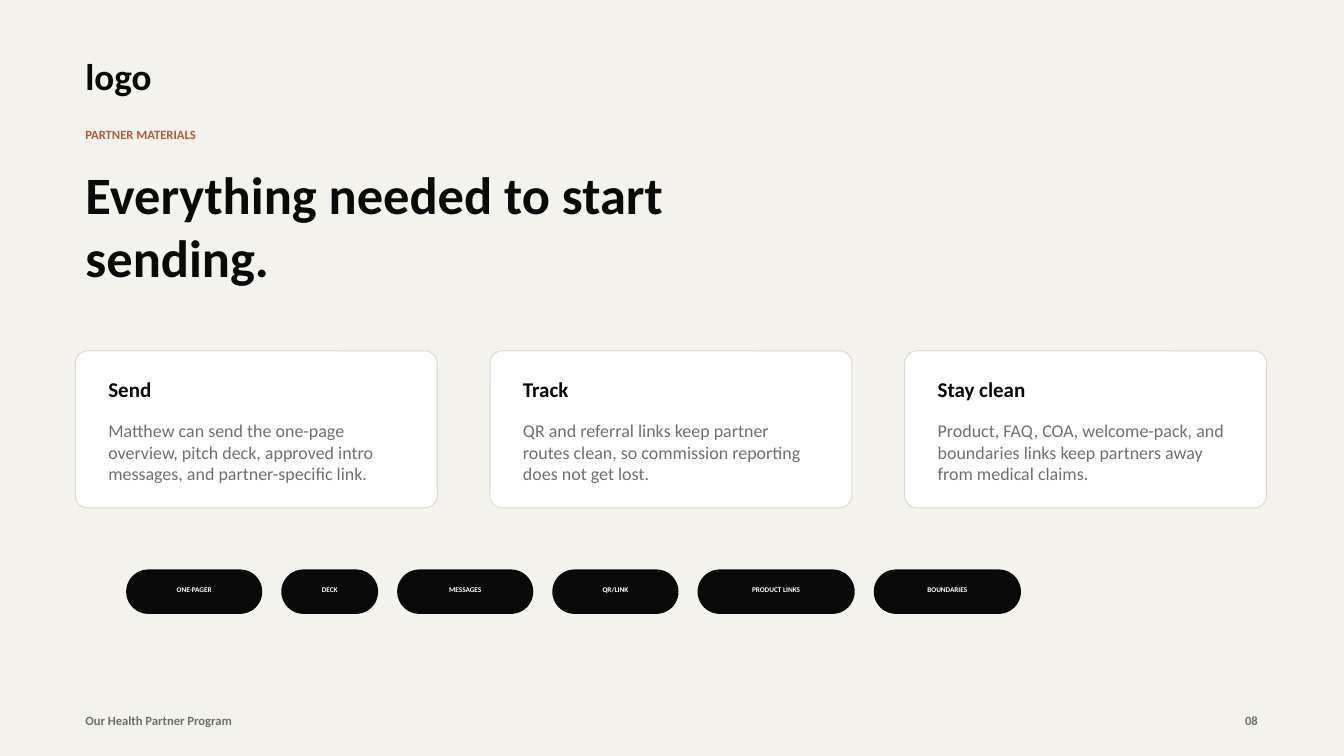
from pptx import Presentation
from pptx.dml.color import RGBColor as RGB
from pptx.enum.shapes import MSO_SHAPE as SHAPE
from pptx.enum.text import MSO_ANCHOR as ANCHOR, MSO_AUTO_SIZE as AUTO, PP_ALIGN as ALIGN
from pptx.util import Cm, Pt

COLORS = {"paper": "F4F2ED", "ink": "080908", "rust": "B55A39",
          "gray": "6D7068", "white": "FFFFFF", "border": "DEDBD2"}
TITLE = "Everything needed to start sending."
CARDS = [
    ("Send", "Matthew can send the one-page overview, pitch deck, approved intro "
             "messages, and partner-specific link."),
    ("Track", "QR and referral links keep partner routes clean, so commission "
              "reporting does not get lost."),
    ("Stay clean", "Product, FAQ, COA, welcome-pack, and boundaries links keep "
                   "partners away from medical claims."),
]
PILLS = [("ONE-PAGER", 3.43), ("DECK", 2.44), ("MESSAGES", 3.43),
         ("QR/LINK", 3.18), ("PRODUCT LINKS", 3.96), ("BOUNDARIES", 3.71)]
STYLES = {
    "brand": {"size": 26.5, "color": "ink", "bold": True},
    "eyebrow": {"size": 9, "color": "rust", "bold": True},
    "title": {"size": 37.5, "color": "ink", "bold": True},
    "heading": {"size": 15, "color": "ink", "bold": True},
    "body": {"size": 12.8, "color": "gray", "bold": False},
    "pill": {"size": 5.2, "color": "white", "bold": True},
    "footer": {"size": 9, "color": "gray", "bold": True},
}
MARGIN = 1.9
CARD_TOP, CARD_W, CARD_H, CARD_STEP, CARD_PAD = 8.84, 9.12, 3.96, 10.45, 0.58
PILL_LEFT, PILL_TOP, PILL_H, PILL_GAP, PILL_PAD = 3.18, 14.35, 1.12, 0.48, 0.37
FOOT_TOP = 17.83


def color(name):
    return RGB.from_string(COLORS[name])


def write(s, text, style, align=ALIGN.LEFT):
    tf = s.text_frame
    for key, value in {"word_wrap": True, "auto_size": AUTO.NONE,
                       "vertical_anchor": ANCHOR.TOP}.items():
        setattr(tf, key, value)
    p = tf.paragraphs[0]
    p.alignment = align
    r = p.add_run()
    r.text = text
    look = STYLES[style]
    for key, value in {"name": "Calibri", "size": Pt(look["size"]),
                       "bold": look["bold"]}.items():
        setattr(r.font, key, value)
    r.font.color.rgb = color(look["color"])


def add_text(s, box, text, style, align=ALIGN.LEFT):
    write(s.shapes.add_textbox(*map(Cm, box)), text, style, align)


def add_panel(s, box, radius, fill, line=None):
    sp = s.shapes.add_shape(SHAPE.ROUNDED_RECTANGLE, *map(Cm, box))
    sp.adjustments[0] = radius
    sp.shadow.inherit = False
    sp.fill.solid()
    sp.fill.fore_color.rgb = color(fill)
    if line:
        sp.line.color.rgb = color(line)
        sp.line.width = Pt(0.75)
    else:
        sp.line.fill.background()


def main():
    prs = Presentation()
    prs.slide_width, prs.slide_height = Cm(33.87), Cm(19.05)
    s = prs.slides.add_slide(prs.slide_layouts[5])
    s.background.fill.solid()
    s.background.fill.fore_color.rgb = color("paper")

    add_text(s, (MARGIN, 1.22, 3.71, 1.37), "logo", "brand")
    add_text(s, (MARGIN, 3.07, 16.41, 0.64), "PARTNER MATERIALS", "eyebrow")
    title = s.shapes.title
    title.left, title.top, title.width, title.height = map(Cm, (MARGIN, 3.96, 19.05, 3.96))
    write(title, TITLE, "title")

    for i, (heading, body) in enumerate(CARDS):
        left = MARGIN + i * CARD_STEP
        inner, width = left + CARD_PAD, CARD_W - 2 * CARD_PAD
        add_panel(s, (left, CARD_TOP, CARD_W, CARD_H), 0.08, "white", "border")
        add_text(s, (inner, CARD_TOP + 0.53, width, 0.89), heading, "heading")
        add_text(s, (inner, CARD_TOP + 1.62, width, 1.96), body, "body")

    left = PILL_LEFT
    for label, width in PILLS:
        add_panel(s, (left, PILL_TOP, width, PILL_H), 0.5, "ink")
        add_text(s, (left + PILL_PAD, PILL_TOP + 0.28, width - 2 * PILL_PAD, 0.48),
                 label, "pill", ALIGN.CENTER)
        left += width + PILL_GAP

    add_text(s, (MARGIN, FOOT_TOP, 8.46, 0.64), "Our Health Partner Program", "footer")
    add_text(s, (30.68, FOOT_TOP, 1.27, 0.64), "08", "footer", ALIGN.RIGHT)
    prs.save("out.pptx")


if __name__ == "__main__":
    main()
